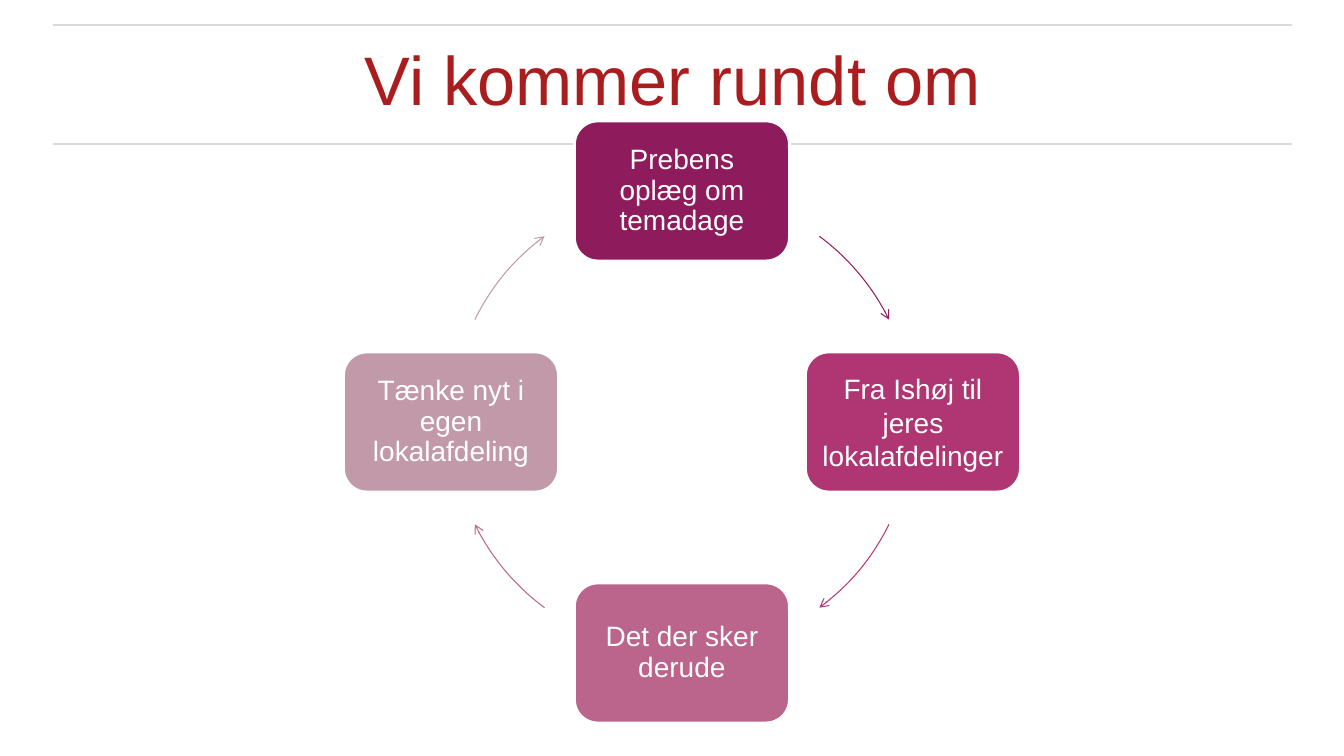
from lxml import etree
from pptx import Presentation
from pptx.dml.color import RGBColor
from pptx.enum.shapes import MSO_CONNECTOR, MSO_SHAPE
from pptx.enum.text import MSO_ANCHOR, PP_ALIGN
from pptx.oxml.ns import qn
from pptx.util import Pt

PX = 914400 / 100.8
STRAIGHT = MSO_CONNECTOR.STRAIGHT
ROUNDED = MSO_SHAPE.ROUNDED_RECTANGLE
ARC = MSO_SHAPE.ARC
MIDDLE = MSO_ANCHOR.MIDDLE
CENTER = PP_ALIGN.CENTER

FONT = "Arial"
WHITE = RGBColor(0xFF, 0xFF, 0xFF)
RED = RGBColor(0xA9, 0x1D, 0x1E)
RULE_GREY = RGBColor(0x44, 0x44, 0x44)

ARC_MIDDLE = 39.9
ARC_SWEEP = 27.2
STEPS = [
    ("Prebens oplæg om temadage", 0.9, (0, -1), -ARC_MIDDLE,
     RGBColor(0x8E, 0x1B, 0x5C), RGBColor(0x96, 0x1D, 0x60)),
    ("Fra Ishøj til jeres lokalafdelinger", 1.0, (1, 0), ARC_MIDDLE,
     RGBColor(0xAF, 0x35, 0x73), RGBColor(0xB4, 0x36, 0x76)),
    ("Det der sker derude", 0.9, (0, 1), 180 - ARC_MIDDLE,
     RGBColor(0xBB, 0x64, 0x8C), RGBColor(0xBC, 0x65, 0x8D)),
    ("Tænke nyt i egen lokalafdeling", 0.9, (-1, 0), 180 + ARC_MIDDLE,
     RGBColor(0xC1, 0x99, 0xA9), RGBColor(0xC1, 0x98, 0xA8)),
]


def px(*lengths):
    """Turn pixel lengths into EMU."""
    return [round(length * PX) for length in lengths]


def write_text(shape, text, size, color, inset, spacing=1.0):
    """Write one centred paragraph in the middle of a shape."""
    frame = shape.text_frame
    frame.word_wrap = True
    frame.vertical_anchor = MIDDLE
    frame.margin_left, frame.margin_top, frame.margin_right, frame.margin_bottom = px(*[inset] * 4)
    paragraph = frame.paragraphs[0]
    paragraph.alignment = CENTER
    paragraph.line_spacing = spacing
    run = paragraph.add_run()
    run.text = text
    run.font.name = FONT
    run.font.size = Pt(size)
    run.font.color.rgb = color


def add_rule(slide, left, top, width):
    """Draw a pale horizontal rule."""
    rule = slide.shapes.add_connector(STRAIGHT, *px(left, top, left + width, top))
    rule.line.color.rgb = RULE_GREY
    rule.line.width = Pt(1)
    properties = rule._element.spPr
    color = properties.find(".//" + qn("a:srgbClr"))
    etree.SubElement(color, qn("a:alpha"), val="30000")
    etree.SubElement(properties, qn("a:effectLst"))


def add_header(slide, left, top, width, height):
    """Place the title between two rules."""
    add_rule(slide, left, top + height, width)
    add_rule(slide, left, top, width)
    title = slide.shapes.add_textbox(*px(left, top, width, height - 12))
    write_text(title, "Vi kommer rundt om", 49, RED, 0)


def add_step(slide, left, top, width, height, text, spacing, fill):
    """Place one rounded box of the cycle."""
    box = slide.shapes.add_shape(ROUNDED, *px(left, top, width, height))
    box.shadow.inherit = False
    box.fill.solid()
    box.fill.fore_color.rgb = fill
    box.line.color.rgb = WHITE
    box.line.width = Pt(2)
    write_text(box, text, 20, WHITE, 8, spacing)


def add_arc_arrow(slide, left, top, diameter, middle, color):
    """Draw a clockwise arc arrow centred on an angle of the given circle."""
    arc = slide.shapes.add_shape(ARC, *px(left, top, diameter, diameter))
    arc.shadow.inherit = False
    for index, offset in enumerate((-ARC_SWEEP / 2, ARC_SWEEP / 2)):
        arc.adjustments[index] = (middle + offset) % 360 * 0.6
    arc.fill.background()
    arc.line.color.rgb = color
    arc.line.width = Pt(0.75)
    etree.SubElement(arc.line._get_or_add_ln(), qn("a:tailEnd"), type="arrow")


def add_cycle(slide, left, top, diameter):
    """Place the four steps and their arrows around a circle."""
    radius = diameter / 2
    width, height = 215, 140
    for text, spacing, (across, down), middle, fill, arrow in STEPS:
        box_left = left + radius * (1 + across) - width / 2
        box_top = top + radius * (1 + down) - height / 2
        add_step(slide, box_left, box_top, width, height, text, spacing, fill)
        add_arc_arrow(slide, left, top, diameter, middle, arrow)


def main():
    """Build and save the slide."""
    presentation = Presentation()
    presentation.slide_width, presentation.slide_height = px(1344, 756)
    slide = presentation.slides.add_slide(presentation.slide_layouts[6])
    add_header(slide, 53, 25, 1239, 119)
    add_cycle(slide, 451, 191, 462)
    presentation.save("out.pptx")


if __name__ == "__main__":
    main()
